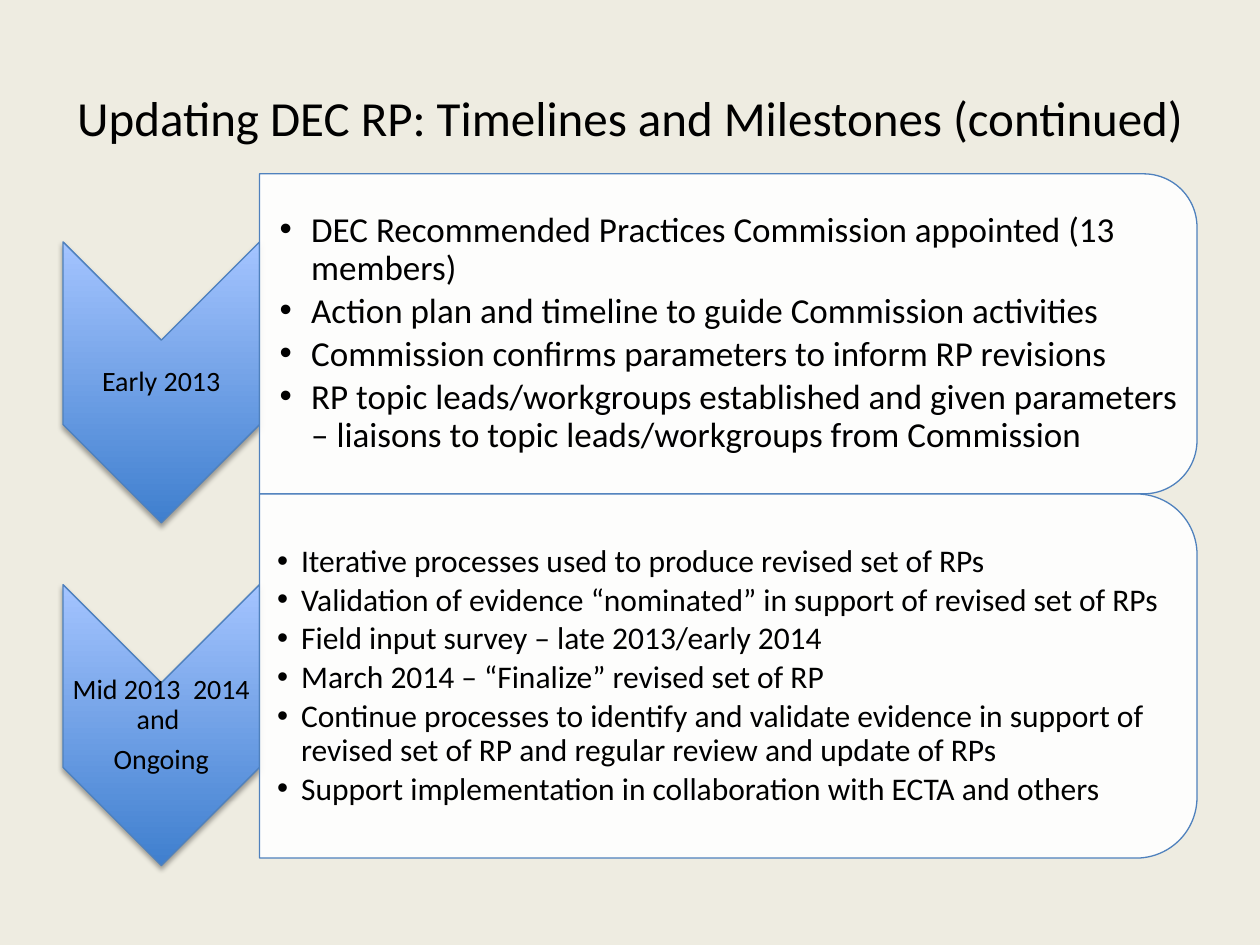
"""Build the slide on timelines and milestones for updating the DEC RP."""
from lxml import etree
from pptx import Presentation
from pptx.dml.color import RGBColor
from pptx.enum.shapes import MSO_SHAPE
from pptx.enum.text import MSO_ANCHOR, PP_ALIGN
from pptx.oxml.ns import qn
from pptx.util import Inches, Pt

CHEVRON = MSO_SHAPE.CHEVRON
ROUNDED_SIDE = MSO_SHAPE.ROUND_2_SAME_RECTANGLE
MIDDLE = MSO_ANCHOR.MIDDLE
CENTER = PP_ALIGN.CENTER
FONT = "Calibri"
COLORS = {
    "background": "EEECE1",
    "text": "000000",
    "outline": "4F81BD",
    "arrow_bottom": "3F7FCE",
    "arrow_top": "A4C4FF",
    "panel": "FFFFFF",
    "shadow": "000000",
}
PHASES = [
    {
        "label": ["Early 2013"],
        "arrow_top": 1.92, "panel_top": 1.38, "panel_height": 2.54,
        "text_box": (2.06, 1.5, 7.31, 2.29),
        "size": 20, "indent": 0.25, "inset": 0.16,
        "milestones": [
            "DEC Recommended Practices Commission appointed (13 members)",
            "Action plan and timeline to guide Commission activities",
            "Commission confirms parameters to inform RP revisions",
            "RP topic leads/workgroups established and given parameters "
            "– liaisons to topic leads/workgroups from Commission",
        ],
    },
    {
        "label": ["Mid 2013  2014 and ", "Ongoing"],
        "arrow_top": 4.64, "panel_top": 3.92, "panel_height": 2.89,
        "text_box": (2.06, 4.06, 7.3, 2.61),
        "size": 18, "indent": 0.19, "inset": 0.14,
        "milestones": [
            "Iterative processes used to produce revised set of RPs",
            "Validation of evidence “nominated” in support of revised set of RPs",
            "Field input survey – late 2013/early 2014",
            "March 2014 – “Finalize” revised set of RP",
            "Continue processes to identify and validate evidence in support of "
            "revised set of RP and regular review and update of RPs",
            "Support implementation in collaboration with ECTA and others",
        ],
    },
]

prs = Presentation()
prs.slide_width, prs.slide_height = Inches(10), Inches(7.5)
slide = prs.slides.add_slide(prs.slide_layouts[6])
slide.background.fill.solid()
slide.background.fill.fore_color.rgb = RGBColor.from_string(COLORS["background"])


def add_text(box, lines, size, insets, spacing=1.0, after=0.0, indent=0.0):
    """Add a text box; an indent above zero makes the lines bulleted."""
    frame = slide.shapes.add_textbox(*map(Inches, box)).text_frame
    frame.word_wrap = True
    frame.vertical_anchor = MIDDLE
    (frame.margin_left, frame.margin_top,
     frame.margin_right, frame.margin_bottom) = map(Inches, insets)
    for number, line in enumerate(lines):
        paragraph = frame.paragraphs[0] if number == 0 else frame.add_paragraph()
        paragraph.line_spacing = spacing
        paragraph.space_after = Pt(after * size)
        if indent:
            properties = paragraph._p.get_or_add_pPr()
            properties.set("marL", str(Inches(indent)))
            properties.set("indent", str(-Inches(indent)))
            etree.SubElement(properties, qn("a:buFont"), typeface="Arial")
            etree.SubElement(properties, qn("a:buChar"), char="•")
        else:
            paragraph.alignment = CENTER
        run = paragraph.add_run()
        run.text = line
        run.font.name = FONT
        run.font.size = Pt(size)
        run.font.color.rgb = RGBColor.from_string(COLORS["text"])


def add_turned_shape(kind, left, top, width, height):
    """Add an outlined shape, turned by 90 degrees, that covers the given area."""
    shape = slide.shapes.add_shape(
        kind, Inches(left + (width - height) / 2), Inches(top + (height - width) / 2),
        Inches(height), Inches(width))
    shape.rotation = 90
    shape.shadow.inherit = False
    shape.line.color.rgb = RGBColor.from_string(COLORS["outline"])
    shape.line.width = Pt(0.75)
    return shape


add_text((0.5, 0.3, 9, 1.25),
         ["Updating DEC RP: Timelines and Milestones (continued)"],
         28, (0.1, 0.05, 0.1, 0.05))

for phase in PHASES:
    arrow = add_turned_shape(CHEVRON, 0.5, phase["arrow_top"], 1.56, 2.23)
    arrow.fill.gradient()
    arrow.fill.gradient_angle = 90
    for stop, name in zip(arrow.fill.gradient_stops, ("arrow_bottom", "arrow_top")):
        stop.color.rgb = RGBColor.from_string(COLORS[name])
    arrow_properties = arrow._element.spPr
    arrow_properties.find(qn("a:gradFill")).set("rotWithShape", "0")
    shadow = etree.SubElement(
        arrow_properties.find(qn("a:effectLst")), qn("a:outerShdw"),
        blurRad=str(Pt(3.1)), dist=str(Pt(1.8)), dir="5400000", rotWithShape="0")
    shade = etree.SubElement(shadow, qn("a:srgbClr"), val=COLORS["shadow"])
    etree.SubElement(shade, qn("a:alpha"), val="35000")
    add_text((0.5, phase["arrow_top"] + 0.78, 1.56, 0.67), phase["label"],
             16, (0.01,) * 4, spacing=0.9, after=0.35)

    panel = add_turned_shape(ROUNDED_SIDE, 2.06, phase["panel_top"],
                             7.44, phase["panel_height"])
    panel.fill.solid()
    panel.fill.fore_color.rgb = RGBColor.from_string(COLORS["panel"])
    panel_color = panel._element.spPr.find(qn("a:solidFill")).find(qn("a:srgbClr"))
    etree.SubElement(panel_color, qn("a:alpha"), val="90000")
    add_text(phase["text_box"], phase["milestones"], phase["size"],
             (phase["inset"], 0.01, 0.01, 0.01), spacing=0.9, after=0.15,
             indent=phase["indent"])

prs.save("out.pptx")
